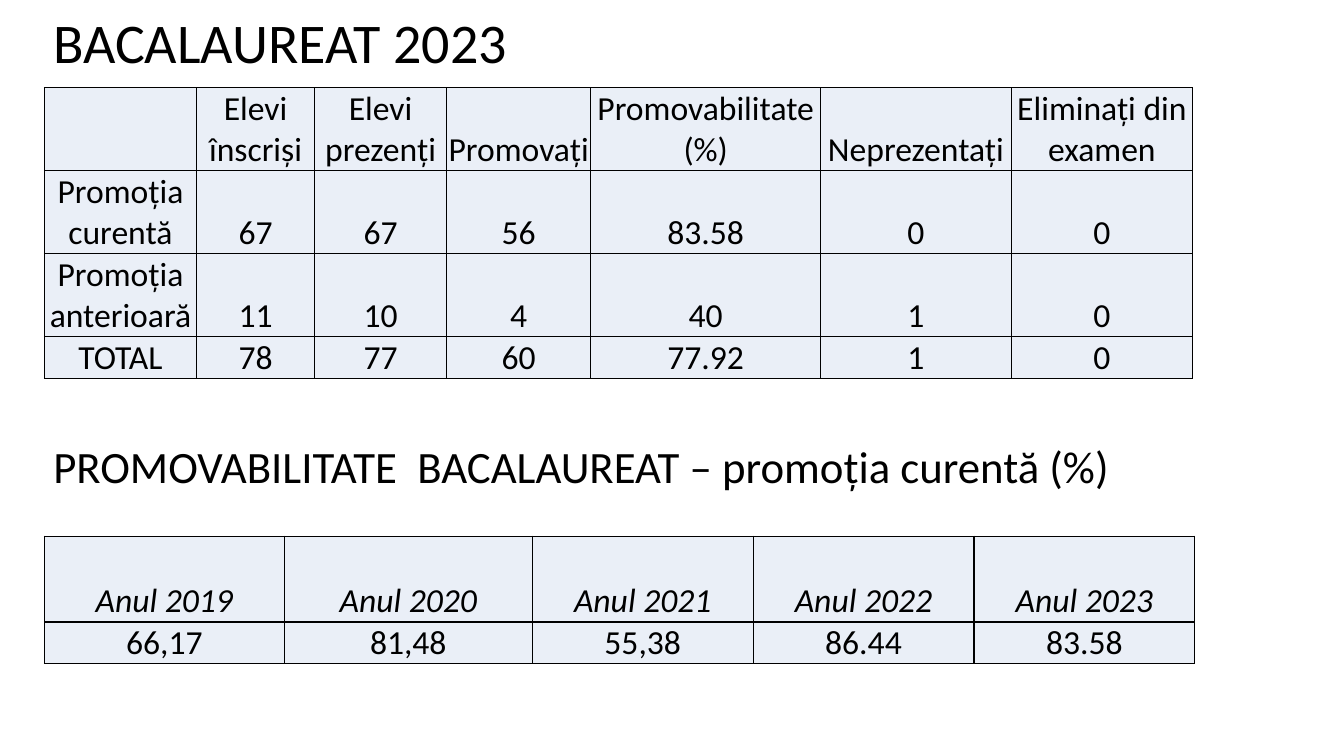
"""Build the slide with the 2023 baccalaureate results."""
from lxml.etree import SubElement
from pptx import Presentation
from pptx.dml.color import RGBColor
from pptx.enum.text import MSO_ANCHOR, MSO_AUTO_SIZE, PP_ALIGN
from pptx.oxml.ns import qn
from pptx.util import Inches, Pt

RESULTS = [
    ["", "Elevi înscriși", "Elevi prezenți", "Promovați", "Promovabilitate\n(%)",
     "Neprezentați", "Eliminați din examen"],
    ["Promoția curentă", "67", "67", "56", "83.58", "0", "0"],
    ["Promoția anterioară", "11", "10", "4", "40", "1", "0"],
    ["TOTAL", "78", "77", "60", "77.92", "1", "0"],
]
PASS_RATES = [
    ["Anul 2019", "Anul 2020", "Anul 2021", "Anul 2022", "Anul 2023"],
    ["66,17", "81,48", "55,38", "86.44", "83.58"],
]


def color(value):
    return RGBColor.from_string(value)


def write_text(frame, text, size, font, ink, align=PP_ALIGN.LEFT, italic=False):
    for index, line in enumerate(text.split("\n")):
        paragraph = frame.add_paragraph() if index else frame.paragraphs[0]
        paragraph.alignment = align
        run = paragraph.add_run()
        run.text = line
        run.font.size = Pt(size)
        run.font.name = font
        run.font.italic = italic
        run.font.color.rgb = color(ink)


class ResultsSlide:
    font = "Calibri"
    ink = "000000"
    cell_fill = "EAEFF7"
    cell_size = 24

    def __init__(self, slide):
        self.slide = slide

    def heading(self, text, left, top, width, height, size, wrap=True):
        frame = self.slide.shapes.add_textbox(
            Inches(left), Inches(top), Inches(width), Inches(height)).text_frame
        frame.word_wrap = wrap
        frame.auto_size = MSO_AUTO_SIZE.SHAPE_TO_FIT_TEXT
        write_text(frame, text, size=size, font=self.font, ink=self.ink)

    def borders(self, cell):
        properties = cell._tc.get_or_add_tcPr()
        for side in ("lnL", "lnR", "lnT", "lnB"):
            line = SubElement(properties, qn(f"a:{side}"), w=str(Pt(1)))
            fill = SubElement(line, qn("a:solidFill"))
            SubElement(fill, qn("a:srgbClr"), val=self.ink)

    def table(self, rows, left, top, widths, heights, italic_header=False):
        grid = self.slide.shapes.add_table(
            len(rows), len(widths), Inches(left), Inches(top),
            Inches(sum(widths)), Inches(sum(heights))).table
        grid.first_row = grid.horz_banding = False
        for column, width in zip(grid.columns, widths):
            column.width = Inches(width)
        for row_index, (values, height) in enumerate(zip(rows, heights)):
            grid.rows[row_index].height = Inches(height)
            for column_index, value in enumerate(values):
                cell = grid.cell(row_index, column_index)
                cell.margin_left = cell.margin_top = cell.margin_right = Inches(0.01)
                cell.margin_bottom = 0
                cell.vertical_anchor = MSO_ANCHOR.BOTTOM
                self.borders(cell)
                cell.fill.solid()
                cell.fill.fore_color.rgb = color(self.cell_fill)
                write_text(cell.text_frame, value, size=self.cell_size,
                           font=self.font, ink=self.ink, align=PP_ALIGN.CENTER,
                           italic=italic_header and row_index == 0)


def main():
    presentation = Presentation()
    presentation.slide_width = Inches(13.33)
    presentation.slide_height = Inches(7.5)
    page = ResultsSlide(presentation.slides.add_slide(presentation.slide_layouts[6]))
    page.table(RESULTS, 0.44, 0.87, [1.51, 1.17, 1.31, 1.43, 2.28, 1.89, 1.8],
               [0.81] * 3 + [0.41])
    page.heading("BACALAUREAT 2023", 0.43, 0.03, 11.24, 0.77, size=40)
    page.heading("PROMOVABILITATE  BACALAUREAT – promoția curentă (%)",
                 0.43, 4.3, 10.78, 0.64, size=32, wrap=False)
    page.table(PASS_RATES, 0.44, 5.32, [2.38, 2.46] + [2.19] * 3, [0.85, 0.41],
               italic_header=True)
    presentation.save("out.pptx")


if __name__ == "__main__":
    main()
